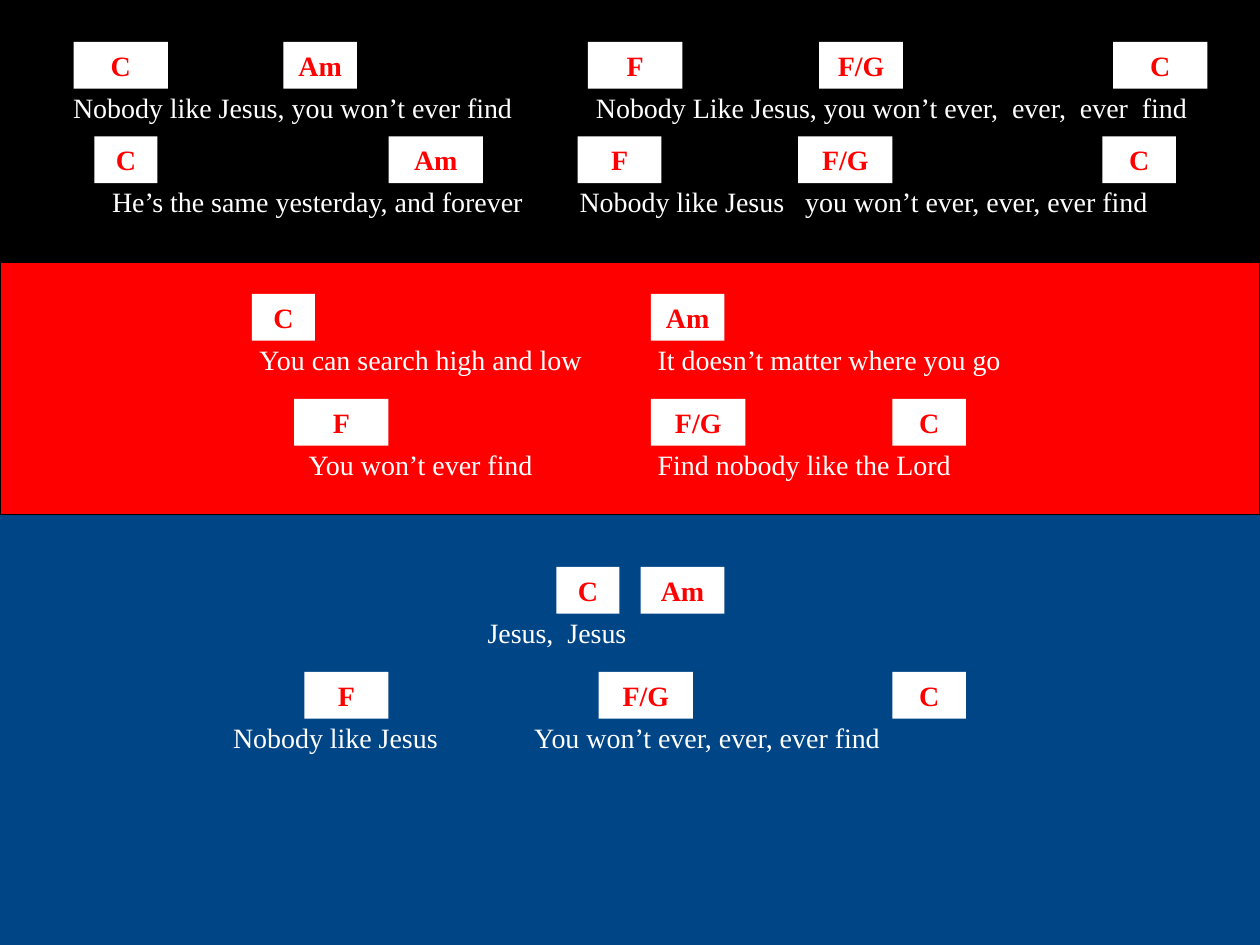
from lxml import etree
from pptx import Presentation
from pptx import util as u
from pptx.dml.color import RGBColor
from pptx.enum import shapes, text
from pptx.oxml.ns import qn

# Each row: top of the chords, chords (name, left, width), phrases (text, left in inches).
# Chord positions are in twelfths of an inch.
ROWS = [
    (4, [("C", 7, 9), ("Am", 27, 7), ("F", 56, 9), ("F/G", 78, 8), ("C", 106, 9)],
     [("Nobody like Jesus, you won’t ever find", 0.58),
      ("Nobody Like Jesus, you won’t ever,  ever,  ever  find", 4.73)]),
    (13, [("C", 9, 6), ("Am", 37, 9), ("F", 55, 8), ("F/G", 76, 9), ("C", 105, 7)],
     [("He’s the same yesterday, and forever", 0.89),
      ("Nobody like Jesus", 4.6), ("you won’t ever, ever, ever find", 6.39)]),
    (28, [("C", 24, 6), ("Am", 62, 7)],
     [("You can search high and low", 2.06), ("It doesn’t matter where you go", 5.22)]),
    (38, [("F", 28, 9), ("F/G", 62, 9), ("C", 85, 7)],
     [("You won’t ever find", 2.45), ("Find nobody like the Lord", 5.22)]),
    (54, [("C", 53, 6), ("Am", 61, 8)],
     [("Jesus,  Jesus", 3.87)]),
    (64, [("F", 29, 8), ("F/G", 57, 9), ("C", 85, 7)],
     [("Nobody like Jesus", 1.85), ("You won’t ever, ever, ever find", 4.24)]),
]
LYRIC_DROP = 4  # twelfths from chord top to lyric top


def rgb(value):
    return RGBColor.from_string(value)


def twelfths(n):
    return u.Inches(n / 12)


class SongSlide:
    font, size, height = "Times New Roman", u.Pt(16), u.Inches(0.37)
    white, red, black, blue = "FFFFFF", "FF0000", "000000", "004586"

    def __init__(self, prs):
        self.width = prs.slide_width
        self.s = prs.slides.add_slide(prs.slide_layouts[6])
        fill = self.s.background.fill
        fill.solid()
        fill.fore_color.rgb = rgb(self.blue)

    def rect(self, left, top, width, height, color):
        sp = self.s.shapes.add_shape(shapes.MSO_SHAPE.RECTANGLE, left, top, width, height)
        sp.shadow.inherit = False
        sp.fill.solid()
        sp.fill.fore_color.rgb = rgb(color)
        return sp

    def band(self, top, height, color):
        sp = self.rect(0, twelfths(top), self.width, twelfths(height), color)
        sp.line.color.rgb = rgb(self.black)
        sp.line.width = u.Pt(0.75)

    def set_text(self, sp, words, color, align, bold=False):
        tf = sp.text_frame
        tf.text = words
        tf.word_wrap = True
        tf.vertical_anchor = text.MSO_ANCHOR.MIDDLE
        p = tf.paragraphs[0]
        p.alignment = align
        for r in p.runs:
            r.font.name, r.font.size, r.font.bold = self.font, self.size, bold
            r.font.color.rgb = rgb(color)
        return p

    def chord(self, name, left, top, width):
        sp = self.rect(twelfths(left), twelfths(top), twelfths(width), self.height, self.white)
        sp.line.fill.background()
        self.set_text(sp, name, self.red, text.PP_ALIGN.CENTER, bold=True)

    def lyric(self, phrases, top):
        sp = self.s.shapes.add_textbox(0, twelfths(top), self.width, self.height)
        words = "\t".join(phrase for phrase, _ in phrases)
        p = self.set_text(sp, words, self.white, text.PP_ALIGN.LEFT)
        # The inset places the first phrase, tab stops place the others
        start = phrases[0][1]
        sp.text_frame.margin_left = u.Inches(start)
        sp.text_frame.margin_right = 0
        if len(phrases) > 1:
            tabs = etree.SubElement(p._p.get_or_add_pPr(), qn("a:tabLst"))
            for _, left in phrases[1:]:
                etree.SubElement(tabs, qn("a:tab"), pos=str(u.Inches(left - start)), algn="l")


def main():
    prs = Presentation()
    prs.slide_width, prs.slide_height = u.Inches(10), u.Inches(7.5)
    song = SongSlide(prs)

    # Section bands
    song.band(25, 24, song.red)
    song.band(0, 25, song.black)

    # Lyrics with their chords above
    for top, chords, phrases in ROWS:
        song.lyric(phrases, top + LYRIC_DROP)
        for name, left, width in chords:
            song.chord(name, left, top, width)

    prs.save("out.pptx")


if __name__ == "__main__":
    main()
